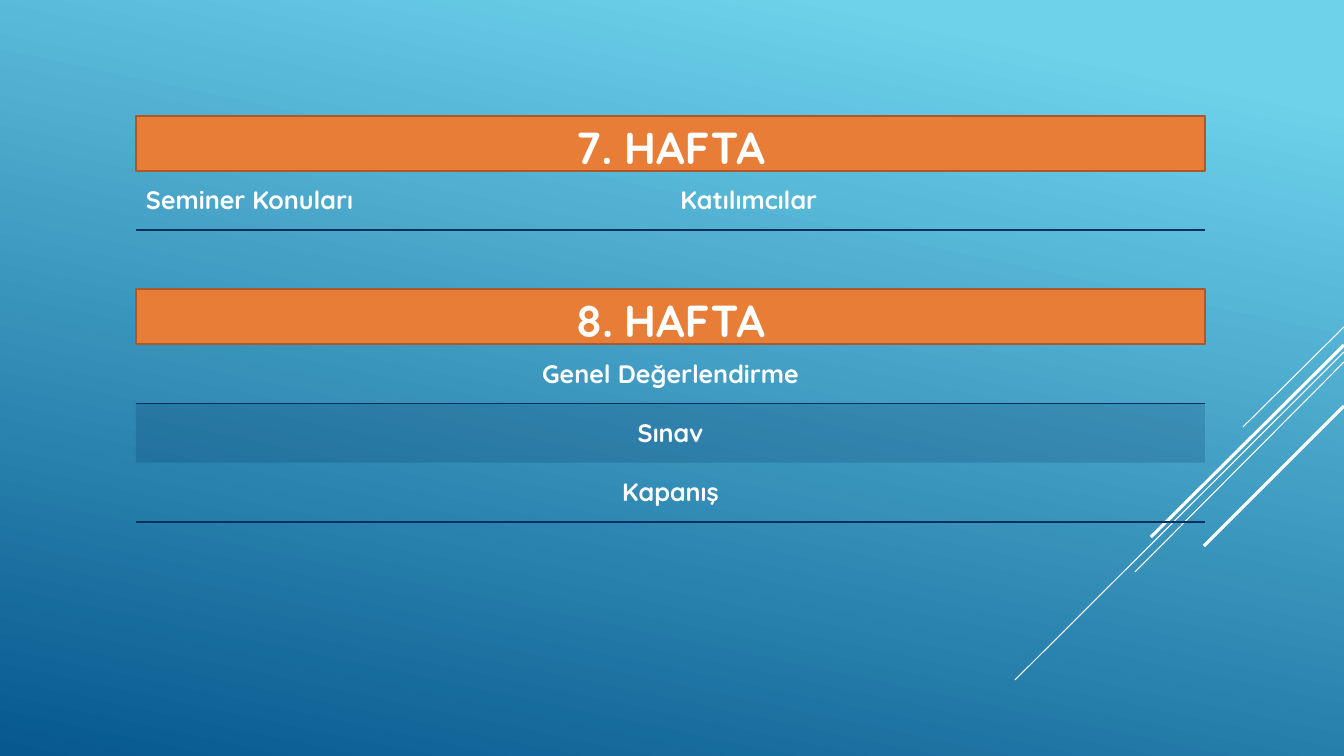
import pptx
import pptx.util
import pptx.dml.color
import pptx.enum.shapes
import pptx.enum.text
import pptx.oxml.ns
from lxml import etree

# Content
FONT, WHITE, NAVY = "Quicksand", "FFFFFF", "052F61"
SKY = [(0.1, "6ED2EB"), (1, "06588E")]
LEFT, WIDE, TALL = 136, 1069, 55
WEEKS = [("7.\tHAFTA", 116), ("8.\tHAFTA", 289)]
# Each row: cell texts, ruled edges, shaded or not
TABLES = [
    (171, 59, "l", [(["Seminer Konuları", "Katılımcılar"], "TB", False)]),
    (344, 178, "ctr", [
        (["Genel Değerlendirme"], "TB", False),
        (["Sınav"], "T", True),
        (["Kapanış"], "B", False),
    ]),
]
# Start y at the right edge, end x, end y, width in points
RAYS = [
    (327, 1243, 427, 0.75),
    (352, 1015, 680, 0.75),
    (362, 1135, 572, 0.75),
    (345, 1151, 537, 2.25),
    (406, 1204, 546, 2.25),
]
ALIGN = {"l": pptx.enum.text.PP_ALIGN.LEFT, "ctr": pptx.enum.text.PP_ALIGN.CENTER}
MIDDLE = pptx.enum.text.MSO_ANCHOR.MIDDLE


def px(n):
    return round(n * 12192000 / 1344)


def tint(code):
    return pptx.dml.color.RGBColor.from_string(code)


def child(node, tag, **attrs):
    return etree.SubElement(node, pptx.oxml.ns.qn(tag), **attrs)


def write(frame, text, size=18, align="ctr", space=None, tab=None):
    para = frame.paragraphs[0]
    para.alignment = ALIGN[align]
    if space:
        para.line_spacing = space
    if tab:
        stops = child(para._p.get_or_add_pPr(), "a:tabLst")
        child(stops, "a:tab", pos=str(px(tab)), algn="l")
    run = para.add_run()
    run.text = text
    run.font.name, run.font.size = FONT, pptx.util.Pt(size)
    run.font.bold = True
    run.font.color.rgb = tint(WHITE)


def rule(cell, edges):
    props = cell._tc.get_or_add_tcPr()
    for side in "LRTB":
        line = child(props, "a:ln" + side, w="12700")
        if side in edges:
            child(child(line, "a:solidFill"), "a:srgbClr", val=NAVY)
        else:
            child(line, "a:noFill")


def shade(cell, dark):
    if not dark:
        cell.fill.background()
        return
    cell.fill.solid()
    cell.fill.fore_color.rgb = tint(NAVY)
    fill = cell._tc.tcPr.find(pptx.oxml.ns.qn("a:solidFill"))
    child(fill[0], "a:alpha", val="20000")


def grid(slide, top, high, align, rows):
    count = len(rows[0][0])
    table = slide.shapes.add_table(
        len(rows), count, px(LEFT), px(top), px(WIDE), px(high)).table
    table.first_row = table.horz_banding = False
    for col in table.columns:
        col.width = px(WIDE / count)
    for r, (texts, edges, dark) in enumerate(rows):
        table.rows[r].height = px(high / len(rows))
        for c, text in enumerate(texts):
            cell = table.cell(r, c)
            cell.margin_left = cell.margin_right = px(10)
            cell.margin_top = cell.margin_bottom = 0
            cell.vertical_anchor = MIDDLE
            write(cell.text_frame, text, align=align)
            rule(cell, edges)
            shade(cell, dark)


def banner(slide, text, top):
    box = slide.shapes.add_shape(
        pptx.enum.shapes.MSO_SHAPE.RECTANGLE, px(LEFT), px(top), px(WIDE), px(TALL))
    box.shadow.inherit = False
    box.fill.solid()
    box.fill.fore_color.rgb = tint("E87D37")
    box.line.color.rgb = tint("AC5929")
    box.line.width = pptx.util.Pt(1.25)
    box.text_frame.word_wrap = True
    box.text_frame.vertical_anchor = MIDDLE
    write(box.text_frame, text, size=32, space=1.1, tab=48)


def ray(slide, start, x, y, width):
    line = slide.shapes.add_connector(
        pptx.enum.shapes.MSO_CONNECTOR.STRAIGHT, px(1344), px(start), px(x), px(y))
    line.line.color.rgb = tint(WHITE)
    line.line.width = pptx.util.Pt(width)
    child(line._element.spPr, "a:effectLst")


def main():
    deck = pptx.Presentation()
    deck.slide_width, deck.slide_height = px(1344), px(756)
    slide = deck.slides.add_slide(deck.slide_layouts[6])

    # Background
    back = slide.background.fill
    back.gradient()
    back.gradient_angle = 258
    for stop, (place, code) in zip(back.gradient_stops, SKY):
        stop.position = place
        stop.color.rgb = tint(code)

    # Diagonal rays, then the weeks
    for item in RAYS:
        ray(slide, *item)
    for item in TABLES:
        grid(slide, *item)
    for item in WEEKS:
        banner(slide, *item)
    deck.save("out.pptx")


if __name__ == "__main__":
    main()
